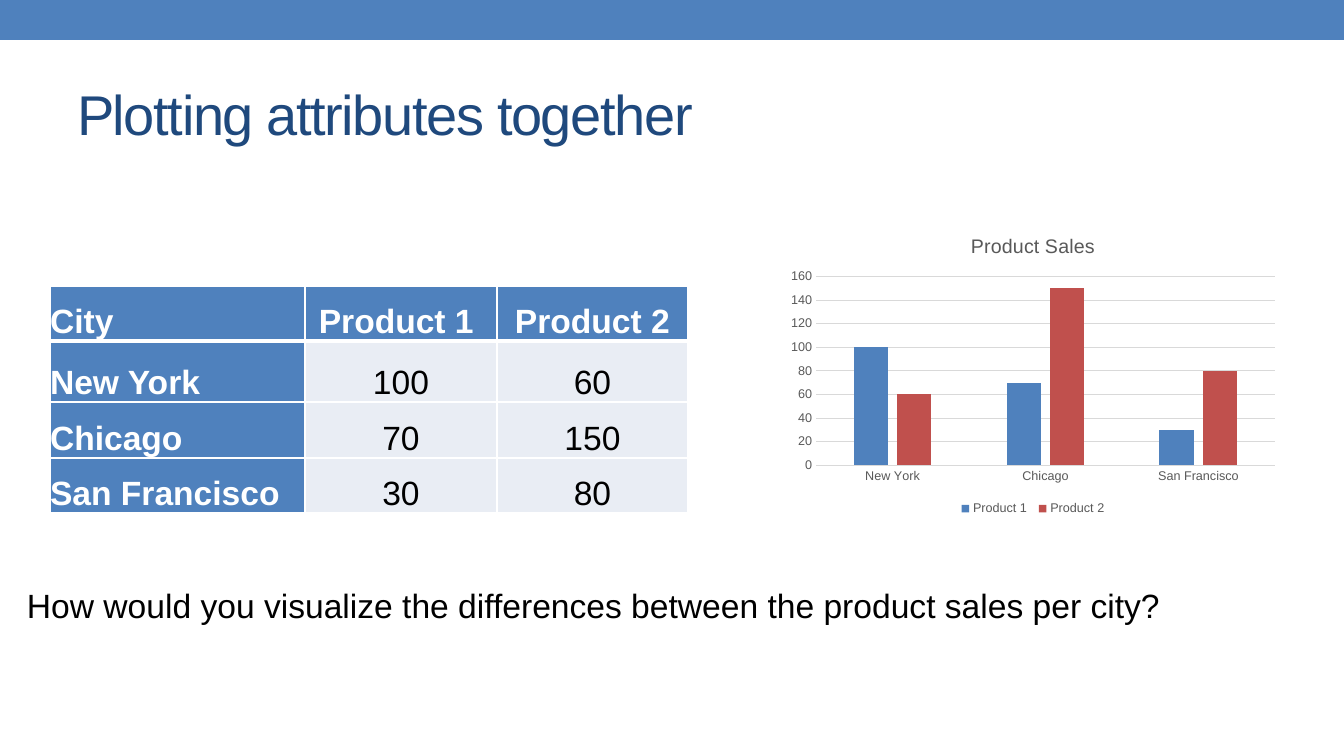
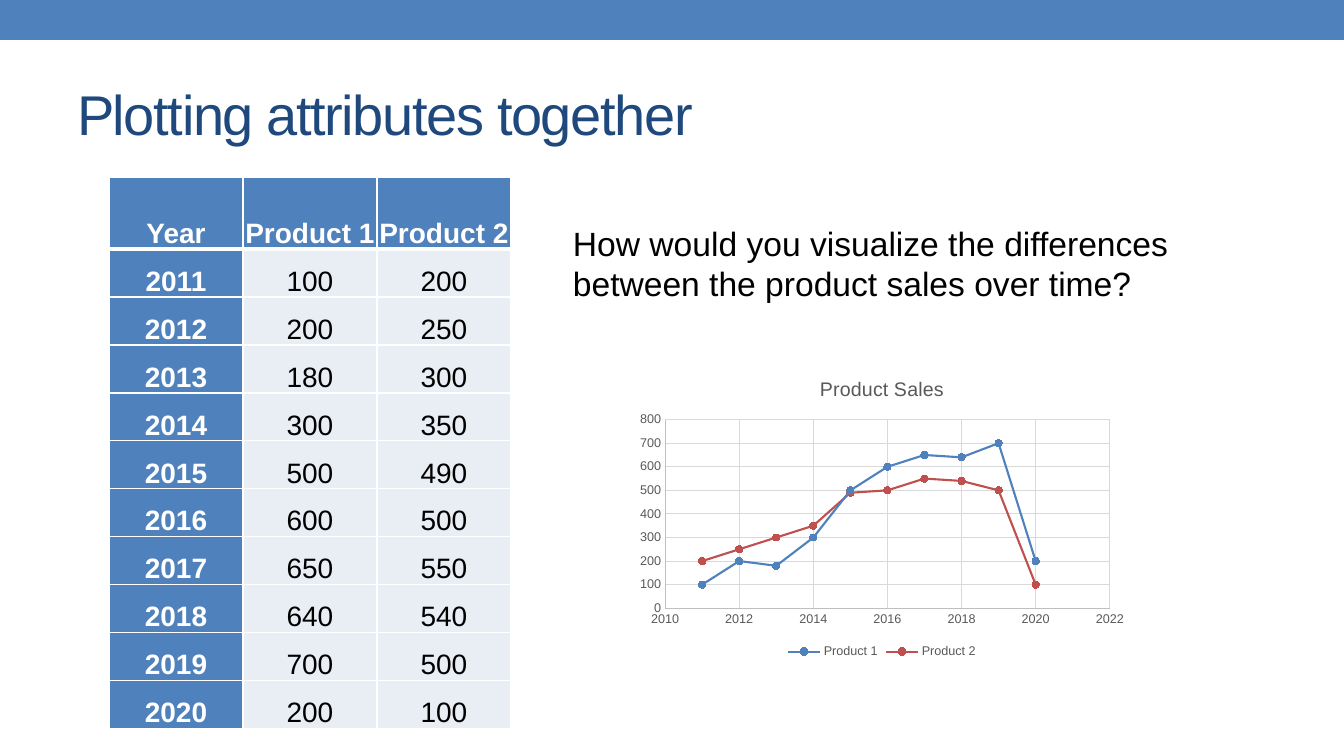
from dataclasses import dataclass

from lxml import etree
from pptx import Presentation
from pptx import util as u
from pptx.chart import data as chart_data
from pptx.dml.color import RGBColor
from pptx.enum import chart as chart_enum
from pptx.enum import shapes, text
from pptx.oxml import ns

SLIDE_WIDTH, SLIDE_HEIGHT = 1344, 756
EMU_PER_PX = 12192000 / SLIDE_WIDTH
FONT = "Arial"
BLUE, RED, NAVY = "4F81BD", "C0504D", "1F497D"
WHITE, BLACK, PALE = "FFFFFF", "000000", "E9EDF4"
GREY, GRID, AXIS = "595959", "D9D9D9", "BFBFBF"
TITLE = "Plotting attributes together"
SERIES_COLORS = (BLUE, RED)


@dataclass(frozen=True)
class Box:
    left: int
    top: int
    width: int
    height: int

    def emu(self) -> tuple:
        return tuple(px(n) for n in (self.left, self.top, self.width, self.height))


@dataclass(frozen=True)
class Sales:
    heading: str
    labels: tuple
    products: dict


@dataclass(frozen=True)
class TableLayout:
    left: int
    top: int
    columns: tuple
    rows: tuple
    size: int
    label_align: text.PP_ALIGN


@dataclass(frozen=True)
class Question:
    box: Box
    wording: str
    wrap: bool


@dataclass(frozen=True)
class SalesSlide:
    sales: Sales
    table: TableLayout
    question: Question
    chart_box: Box
    scatter: bool


TITLE_BOX = Box(67, 59, 1210, 109)
BAND_BOX = Box(0, 0, SLIDE_WIDTH, 40)

SLIDES = (
    SalesSlide(
        Sales(
            "City",
            ("New York", "Chicago", "San Francisco"),
            {"Product 1 ": (100, 70, 30), "Product 2": (60, 150, 80)},
        ),
        TableLayout(50, 286, (255, 192, 191), (55, 61, 56, 55), 24, text.PP_ALIGN.LEFT),
        Question(
            Box(17, 580, 1165, 50),
            "How would you visualize the differences between the product sales per city?",
            False,
        ),
        Box(781, 218, 504, 302),
        False,
    ),
    SalesSlide(
        Sales(
            "Year",
            tuple(range(2011, 2021)),
            {
                "Product 1": (100, 200, 180, 300, 500, 600, 650, 640, 700, 200),
                "Product 2": (200, 250, 300, 350, 490, 500, 550, 540, 500, 100),
            },
        ),
        TableLayout(109, 177, (134,) * 3, (72,) + (48,) * 10, 20, text.PP_ALIGN.CENTER),
        Question(
            Box(563, 218, 638, 92),
            "How would you visualize the differences between the product sales over time?",
            True,
        ),
        Box(630, 361, 504, 302),
        True,
    ),
)


def px(length: int) -> u.Emu:
    return u.Emu(round(length * EMU_PER_PX))


def color(value: str) -> RGBColor:
    return RGBColor.from_string(value)


def style_font(font, size: float, value: str, bold: bool = False) -> None:
    font.name = FONT
    font.size = u.Pt(size)
    font.bold = bold
    font.color.rgb = color(value)


def style_line(line, value: str, width: float) -> None:
    line.color.rgb = color(value)
    line.width = u.Pt(width)


def paint(fill, value: str) -> None:
    fill.solid()
    fill.fore_color.rgb = color(value)


def add_master_band(presentation, slide) -> None:
    band = slide.shapes.add_shape(shapes.MSO_SHAPE.RECTANGLE, *BAND_BOX.emu())
    band.shadow.inherit = False
    paint(band.fill, BLUE)
    band.line.fill.background()
    presentation.slide_master.shapes.element.insert(2, band.element)


def set_title(slide) -> None:
    title = slide.shapes.title
    title.left, title.top, title.width, title.height = TITLE_BOX.emu()
    frame = title.text_frame
    frame.text = TITLE
    frame.auto_size = text.MSO_AUTO_SIZE.NONE
    frame.vertical_anchor = text.MSO_ANCHOR.MIDDLE
    paragraph = frame.paragraphs[0]
    paragraph.alignment = text.PP_ALIGN.LEFT
    run = paragraph.runs[0]
    style_font(run.font, 40, NAVY)
    run.font._element.set("spc", "-100")


def set_cell_borders(cell, top: int, bottom: int) -> None:
    properties = cell._tc.get_or_add_tcPr()
    for side, points in (("L", 1), ("R", 1), ("T", top), ("B", bottom)):
        line = etree.SubElement(properties, ns.qn(f"a:ln{side}"), w=str(u.Pt(points)))
        fill = etree.SubElement(line, ns.qn("a:solidFill"))
        etree.SubElement(fill, ns.qn("a:srgbClr"), val=WHITE)


def add_sales_table(slide, sales: Sales, layout: TableLayout) -> None:
    rows = [(sales.heading, *sales.products), *zip(sales.labels, *sales.products.values())]
    box = Box(layout.left, layout.top, sum(layout.columns), sum(layout.rows))
    table = slide.shapes.add_table(len(rows), len(layout.columns), *box.emu()).table
    table.horz_banding = False
    for column, width in zip(table.columns, layout.columns):
        column.width = px(width)
    for row, height in zip(table.rows, layout.rows):
        row.height = px(height)
    for row_index, values in enumerate(rows):
        for column_index, value in enumerate(values):
            cell = table.cell(row_index, column_index)
            is_label = row_index == 0 or column_index == 0
            set_cell_borders(cell, 3 if row_index == 1 else 1, 3 if row_index == 0 else 1)
            paint(cell.fill, BLUE if is_label else PALE)
            cell.margin_left = cell.margin_right = cell.margin_top = cell.margin_bottom = 0
            cell.vertical_anchor = text.MSO_ANCHOR.BOTTOM
            cell.text_frame.text = str(value)
            paragraph = cell.text_frame.paragraphs[0]
            paragraph.alignment = layout.label_align if column_index == 0 else text.PP_ALIGN.CENTER
            style_font(paragraph.runs[0].font, layout.size, WHITE if is_label else BLACK, is_label)


def add_question(slide, question: Question) -> None:
    frame = slide.shapes.add_textbox(*question.box.emu()).text_frame
    frame.text = question.wording
    frame.word_wrap = question.wrap
    frame.auto_size = text.MSO_AUTO_SIZE.SHAPE_TO_FIT_TEXT
    style_font(frame.paragraphs[0].runs[0].font, 24, BLACK)


def style_axis(axis, line_color: str | None, gridlines: bool) -> None:
    axis.major_tick_mark = axis.minor_tick_mark = chart_enum.XL_TICK_MARK.NONE
    style_font(axis.tick_labels.font, 9, GREY)
    axis.has_major_gridlines = gridlines
    if gridlines:
        style_line(axis.major_gridlines.format.line, GRID, 0.75)
    if line_color:
        style_line(axis.format.line, line_color, 0.75)
    else:
        axis.format.line.fill.background()


def set_scale(axis, minimum: int, maximum: int, step: int) -> None:
    axis.minimum_scale, axis.maximum_scale, axis.major_unit = minimum, maximum, step


def add_chart(slide, box: Box, kind, data):
    chart = slide.shapes.add_chart(kind, *box.emu(), data).chart
    style_font(chart.font, 10, BLACK)
    chart.has_title = True
    chart.chart_title.text_frame.text = "Product Sales"
    style_font(chart.chart_title.text_frame.paragraphs[0].runs[0].font, 14, GREY)
    chart.has_legend = True
    chart.legend.position = chart_enum.XL_LEGEND_POSITION.BOTTOM
    chart.legend.include_in_layout = False
    style_font(chart.legend.font, 9, GREY)
    chart.plots[0].vary_by_categories = False
    return chart


def add_column_chart(slide, sales: Sales, box: Box) -> None:
    data = chart_data.CategoryChartData()
    data.categories = sales.labels
    for name, values in sales.products.items():
        data.add_series(name, values)
    chart = add_chart(slide, box, chart_enum.XL_CHART_TYPE.COLUMN_CLUSTERED, data)
    plot = chart.plots[0]
    plot.gap_width, plot.overlap = 219, -27
    for series, value in zip(plot.series, SERIES_COLORS):
        paint(series.format.fill, value)
    style_axis(chart.category_axis, GRID, False)
    style_axis(chart.value_axis, None, True)
    set_scale(chart.value_axis, 0, 160, 20)


def add_scatter_chart(slide, sales: Sales, box: Box) -> None:
    data = chart_data.XyChartData()
    for name, values in sales.products.items():
        points = data.add_series(name)
        for year, value in zip(sales.labels, values):
            points.add_data_point(year, value)
    chart = add_chart(slide, box, chart_enum.XL_CHART_TYPE.XY_SCATTER_LINES, data)
    for series, value in zip(chart.plots[0].series, SERIES_COLORS):
        series.smooth = False
        style_line(series.format.line, value, 1.5)
        series.marker.style = chart_enum.XL_MARKER_STYLE.CIRCLE
        series.marker.size = 5
        paint(series.marker.format.fill, value)
        style_line(series.marker.format.line, value, 0.75)
    for axis in (chart.category_axis, chart.value_axis):
        style_axis(axis, AXIS, True)
    set_scale(chart.category_axis, 2010, 2022, 2)
    set_scale(chart.value_axis, 0, 800, 100)


def main() -> None:
    presentation = Presentation()
    presentation.slide_width, presentation.slide_height = px(SLIDE_WIDTH), px(SLIDE_HEIGHT)
    title_only = presentation.slide_layouts.get_by_name("Title Only")
    for content in SLIDES:
        slide = presentation.slides.add_slide(title_only)
        set_title(slide)
        add_sales_table(slide, content.sales, content.table)
        add_question(slide, content.question)
        draw_chart = add_scatter_chart if content.scatter else add_column_chart
        draw_chart(slide, content.sales, content.chart_box)
    add_master_band(presentation, presentation.slides[0])
    presentation.save("out.pptx")


if __name__ == "__main__":
    main()
